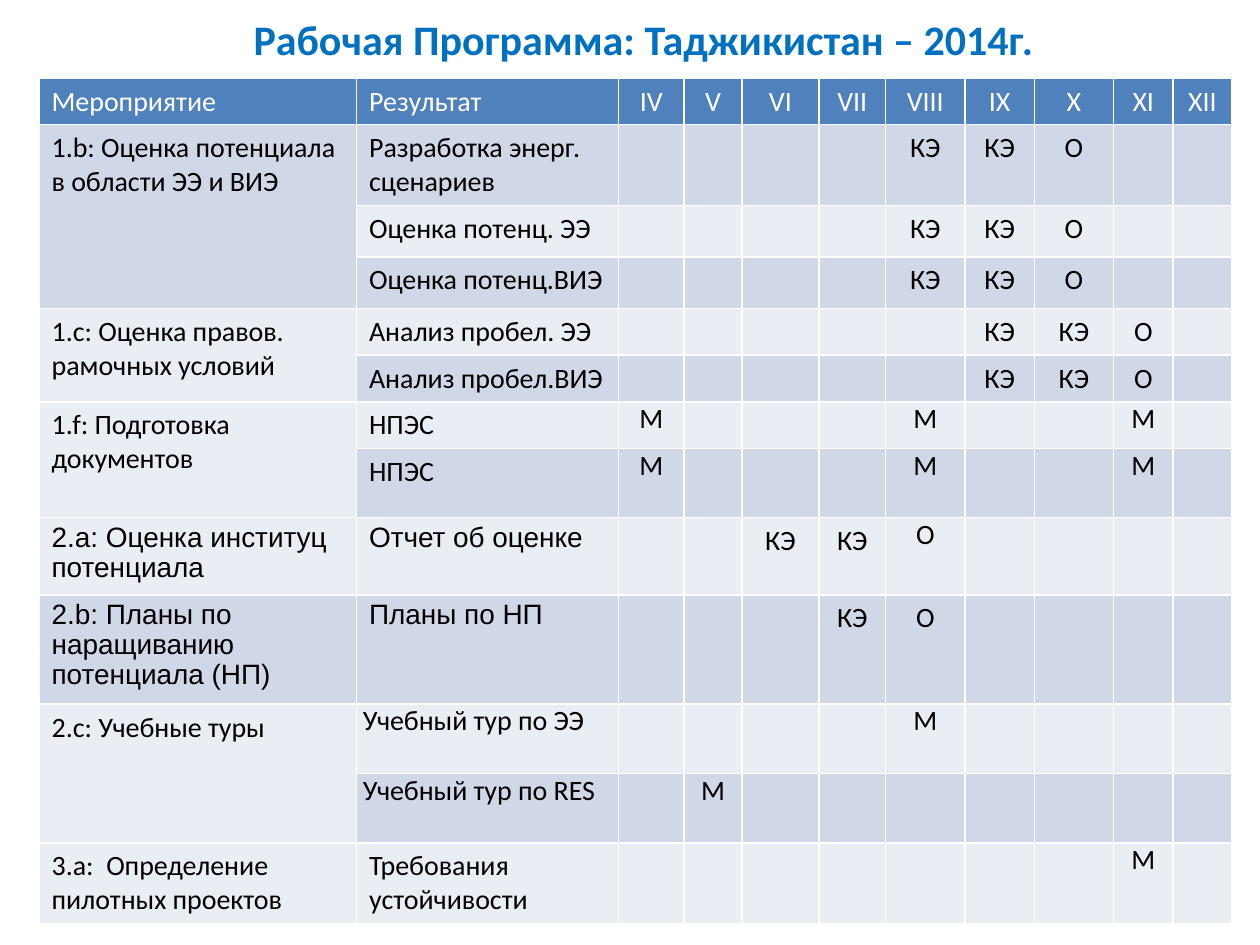
from dataclasses import dataclass

from lxml import etree
from pptx import Presentation
from pptx.dml.color import RGBColor
from pptx.enum import text
from pptx.oxml import ns
from pptx.util import Inches, Pt


@dataclass(frozen=True)
class Theme:
    title: str = "0070C0"
    header: str = "4F81BD"
    header_text: str = "FFFFFF"
    body_text: str = "000000"
    bands: tuple = ("E9EDF4", "D0D8E8")
    font: str = "Calibri"
    alternate_font: str = "Arial"
    title_size: int = 24
    table_size: int = 16


THEME = Theme()
CENTER = text.PP_ALIGN.CENTER
LEFT = text.PP_ALIGN.LEFT

MONTHS = ["IV", "V", "VI", "VII", "VIII", "IX", "X", "XI", "XII"]
HEADER = ["Мероприятие", "Результат"] + MONTHS
COLUMN_WIDTHS = [2.52, 2.08, 0.52, 0.46, 0.61, 0.53, 0.63, 0.55, 0.63, 0.47, 0.47]
ROW_HEIGHTS = [0.37, 0.64, 0.41, 0.41, 0.37, 0.37, 0.37, 0.55, 0.59, 0.84, 0.55, 0.55, 0.64]

# Each activity with its results and the marks by month
EXPERT_LATE_SUMMER = {"VIII": "КЭ", "IX": "КЭ", "X": "О"}
EXPERT_AUTUMN = {"IX": "КЭ", "X": "КЭ", "XI": "О"}
MEETINGS = {"IV": "М", "VIII": "М", "XI": "М"}
PROGRAMME = [
    ("1.b: Оценка потенциала в области ЭЭ и ВИЭ", [
        ("Разработка энерг. сценариев", EXPERT_LATE_SUMMER),
        ("Оценка потенц. ЭЭ", EXPERT_LATE_SUMMER),
        ("Оценка потенц.ВИЭ", EXPERT_LATE_SUMMER)]),
    ("1.c: Оценка правов. рамочных условий", [
        ("Анализ пробел. ЭЭ", EXPERT_AUTUMN),
        ("Анализ пробел.ВИЭ", EXPERT_AUTUMN)]),
    ("1.f: Подготовка документов", [("НПЭС", MEETINGS), ("НПЭС", MEETINGS)]),
    ("2.a: Оценка институц потенциала", [
        ("Отчет об оценке", {"VI": "КЭ", "VII": "КЭ", "VIII": "О"})]),
    ("2.b: Планы по наращиванию потенциала (НП)", [
        ("Планы по НП", {"VII": "КЭ", "VIII": "О"})]),
    ("2.c: Учебные туры", [
        (" Учебный тур по ЭЭ", {"VIII": "М"}),
        (" Учебный тур по RES", {"V": "М"})]),
    ("3.a:  Определение пилотных проектов", [
        ("Требования устойчивости", {"XI": "М"})]),
]


def write(frame, words, *, size, color, font=THEME.font, bold=False,
          align=LEFT, line_spacing=None):
    paragraph = frame.paragraphs[0]
    paragraph.alignment = align
    paragraph.line_spacing = line_spacing
    if not words:
        # An empty cell keeps the table's type size, so its row does not grow
        etree.SubElement(paragraph._p, ns.qn("a:endParaRPr"), sz=str(size * 100))
        return
    run = paragraph.add_run()
    run.text = words
    run.font.size = Pt(size)
    run.font.name = font
    run.font.bold = bold
    run.font.color.rgb = RGBColor.from_string(color)


def add_title(slide, words):
    box = slide.shapes.add_textbox(Inches(1.02), Inches(-0.08), Inches(8.25), Inches(0.78))
    frame = box.text_frame
    frame.word_wrap = True
    frame.vertical_anchor = text.MSO_ANCHOR.MIDDLE
    write(frame, words, size=THEME.title_size, color=THEME.title, bold=True, align=CENTER)


def fill_cell(cell, words, fill, *, color=THEME.body_text, flush=False, **style):
    cell.fill.solid()
    cell.fill.fore_color.rgb = RGBColor.from_string(fill)
    if flush:
        cell.margin_left = cell.margin_right = cell.margin_top = cell.margin_bottom = 0
    write(cell.text_frame, words, size=THEME.table_size, color=color, **style)


def add_table(slide):
    frame = slide.shapes.add_table(
        len(ROW_HEIGHTS), len(COLUMN_WIDTHS), Inches(0.31), Inches(0.62),
        Inches(sum(COLUMN_WIDTHS)), Inches(sum(ROW_HEIGHTS)))
    table = frame.table
    for column, width in zip(table.columns, COLUMN_WIDTHS):
        column.width = Inches(width)
    for row, height in zip(table.rows, ROW_HEIGHTS):
        row.height = Inches(height)
    return table


def fill_header(table):
    for index, words in enumerate(HEADER):
        fill_cell(table.cell(0, index), words, THEME.header, color=THEME.header_text,
                  align=CENTER if index > 1 else LEFT)


def fill_result(table, row, result, marks, label_style):
    band = THEME.bands[row % 2]
    fill_cell(table.cell(row, 1), result, band,
              flush=result.startswith(" "), **label_style)
    for column, month in enumerate(MONTHS, start=2):
        mark = marks.get(month, "")
        flush = mark == "М" or (mark == "О" and "VI" in marks)
        fill_cell(table.cell(row, column), mark, band, flush=flush, align=CENTER)


def fill_programme(table):
    row = 1
    for activity, results in PROGRAMME:
        label_style = {}
        if activity.startswith(("2.a", "2.b")):
            label_style = {"font": THEME.alternate_font, "line_spacing": 0.96}
        first = table.cell(row, 0)
        if len(results) > 1:
            first.merge(table.cell(row + len(results) - 1, 0))
        fill_cell(first, activity, THEME.bands[row % 2], **label_style)
        for result, marks in results:
            fill_result(table, row, result, marks, label_style)
            row += 1


def main():
    presentation = Presentation()
    presentation.slide_width = Inches(10)
    presentation.slide_height = Inches(7.5)
    slide = presentation.slides.add_slide(presentation.slide_layouts[6])

    # Heading
    add_title(slide, "Рабочая Программа: Таджикистан – 2014г. ")

    # Work plan by month
    table = add_table(slide)
    fill_header(table)
    fill_programme(table)

    presentation.save("out.pptx")


if __name__ == "__main__":
    main()
